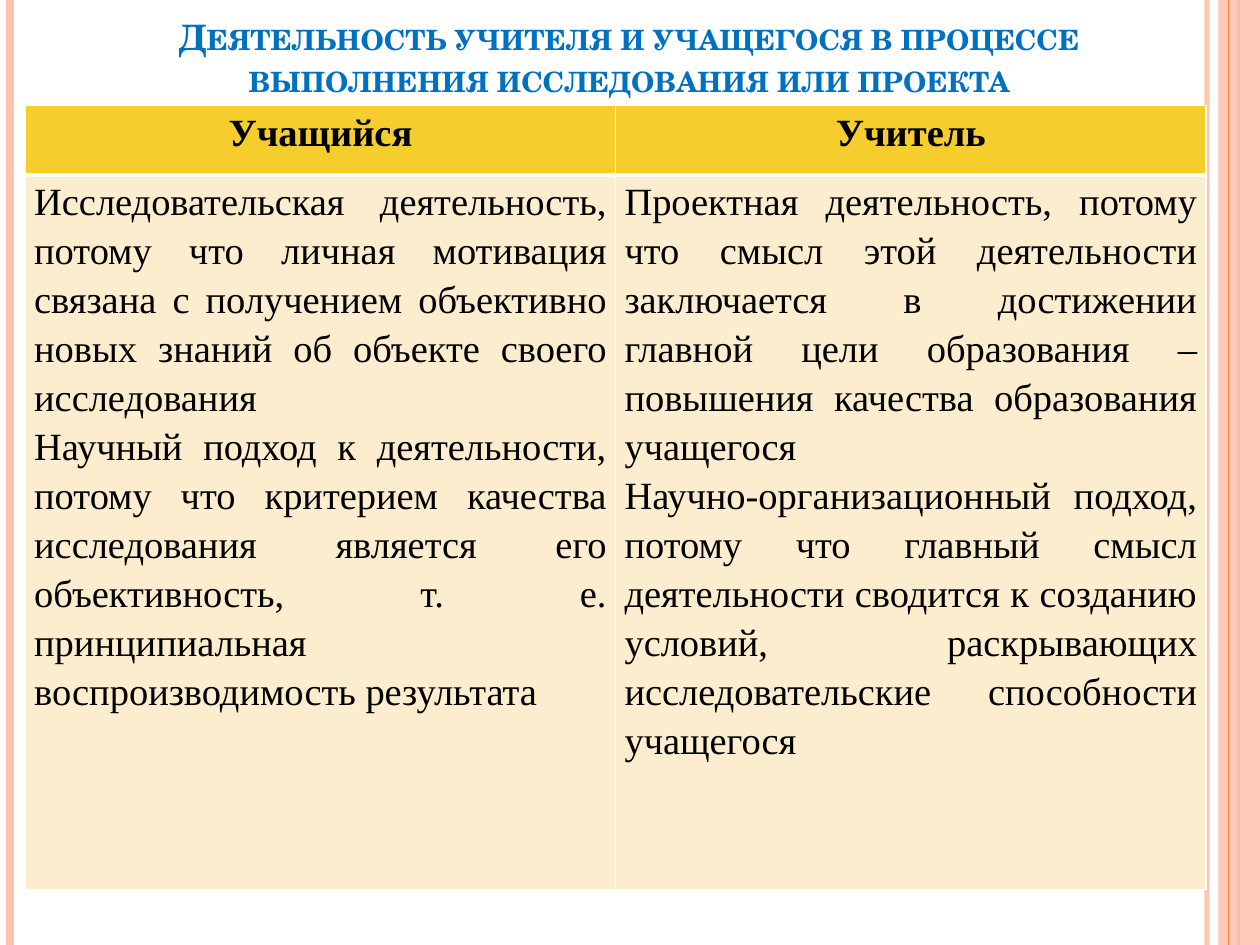
from dataclasses import dataclass

from pptx import Presentation
from pptx.dml.color import RGBColor
from pptx.enum.shapes import MSO_CONNECTOR, MSO_SHAPE
from pptx.enum.text import MSO_ANCHOR, MSO_AUTO_SIZE, PP_ALIGN
from pptx.oxml.ns import qn
from pptx.oxml.xmlchemy import OxmlElement
from pptx.util import Cm, Pt

STRAIGHT = MSO_CONNECTOR.STRAIGHT
RECTANGLE = MSO_SHAPE.RECTANGLE
CENTER, JUSTIFY = PP_ALIGN.CENTER, PP_ALIGN.JUSTIFY
TITLE_ONLY = 5
WIDTH, HEIGHT = 25.4, 19.05
PINK, ORANGE = "FEC3AE", "FE8637"
TITLE_TEXT = ("Деятельность учителя и учащегося в процессе "
              "выполнения исследования или проекта")


@dataclass
class Stripe:
    x: float
    color: str
    weight: float
    opacity: int = 100


@dataclass
class Role:
    name: str
    activities: list[str]


LOWER_STRIPES = [
    Stripe(24.33, PINK, 3, 93),
    Stripe(0.2, PINK, 4.5),
    Stripe(24.97, ORANGE, 1.5),
]
UPPER_STRIPE = Stripe(24.77, ORANGE, 0.75)

ROLES = [
    Role("Учащийся", [
        "Исследовательская деятельность, потому что личная мотивация связана "
        "с получением объективно новых знаний об объекте своего исследования",
        "Научный подход к деятельности, потому что критерием качества "
        "исследования является его объективность, т. е. принципиальная "
        "воспроизводимость результата",
    ]),
    Role("Учитель", [
        "Проектная деятельность, потому что смысл этой деятельности "
        "заключается в достижении главной цели образования – повышения "
        "качества образования учащегося",
        "Научно-организационный подход, потому что главный смысл деятельности "
        "сводится к созданию условий, раскрывающих исследовательские "
        "способности учащегося",
    ]),
]


def rgb(color: str) -> RGBColor:
    return RGBColor.from_string(color)


def set_opacity(shape, percent: int) -> None:
    for color in shape._element.spPr.iter(qn("a:srgbClr")):
        alpha = OxmlElement("a:alpha")
        alpha.set("val", str(percent * 1000))
        color.append(alpha)


def draw_stripe(page, stripe: Stripe) -> None:
    line = page.shapes.add_connector(
        STRAIGHT, Cm(stripe.x), Cm(0), Cm(stripe.x), Cm(HEIGHT))
    line.line.color.rgb = rgb(stripe.color)
    line.line.width = Pt(stripe.weight)
    if stripe.opacity < 100:
        set_opacity(line, stripe.opacity)
    line._element.spPr.append(OxmlElement("a:effectLst"))


def draw_band(page) -> None:
    left = 24.56
    band = page.shapes.add_shape(
        RECTANGLE, Cm(left), Cm(0), Cm(WIDTH - left), Cm(HEIGHT))
    band.shadow.inherit = False
    band.fill.solid()
    band.fill.fore_color.rgb = rgb(PINK)
    band.line.fill.background()
    set_opacity(band, 87)


def add_span(para, text: str, font: str, size: float, color: str, bold: bool):
    span = para.add_run()
    span.text = text
    span.font.name = font
    span.font.size = Pt(size)
    span.font.bold = bold
    span.font.color.rgb = rgb(color)
    return span


def write_title(page) -> None:
    title = page.shapes.title
    title.left, title.top = Cm(1.27), Cm(0)
    title.width, title.height = Cm(22.83), Cm(2.13)
    box = title.text_frame
    box.word_wrap = True
    box.auto_size = MSO_AUTO_SIZE.NONE
    box.vertical_anchor = MSO_ANCHOR.BOTTOM
    para = box.paragraphs[0]
    para.alignment = CENTER
    span = add_span(para, TITLE_TEXT, "TeX Gyre Schola", 20, "0070C0", True)
    span.font._element.set("cap", "small")


def set_borders(cell, bottom: float) -> None:
    """Give the cell white borders, 1 pt wide except at the bottom."""
    properties = cell._tc.get_or_add_tcPr()
    sides = [("a:lnL", 1), ("a:lnR", 1), ("a:lnT", 1), ("a:lnB", bottom)]
    for index, (side, weight) in enumerate(sides):
        border = OxmlElement(side)
        border.set("w", str(Pt(weight)))
        fill = OxmlElement("a:solidFill")
        color = OxmlElement("a:srgbClr")
        color.set("val", "FFFFFF")
        fill.append(color)
        border.append(fill)
        properties.insert(index, border)


def fill_cell(cell, texts: list[str], fill: str, header: bool) -> None:
    cell.margin_left = cell.margin_right = Cm(0.18)
    cell.margin_top = cell.margin_bottom = Cm(0)
    cell.fill.solid()
    cell.fill.fore_color.rgb = rgb(fill)
    set_borders(cell, 3 if header else 1)
    box = cell.text_frame
    for index, text in enumerate(texts):
        para = box.add_paragraph() if index else box.paragraphs[0]
        para.alignment = CENTER if header else JUSTIFY
        para.line_spacing = 1.15
        add_span(para, text, "Times New Roman", 22, "000000", header)


def draw_table(page, roles: list[Role]) -> None:
    row_heights = [1.4, 14.4]
    column_width = 11.9
    table = page.shapes.add_table(
        len(row_heights), len(roles), Cm(0.51), Cm(2.13),
        Cm(column_width * len(roles)), Cm(sum(row_heights))).table
    for row, height in zip(table.rows, row_heights):
        row.height = Cm(height)
    for index, role in enumerate(roles):
        table.columns[index].width = Cm(column_width)
        fill_cell(table.cell(0, index), [role.name], "F5CD2D", True)
        fill_cell(table.cell(1, index), role.activities, "FBEDCD", False)


def main() -> None:
    deck = Presentation()
    deck.slide_width, deck.slide_height = Cm(WIDTH), Cm(HEIGHT)
    page = deck.slides.add_slide(deck.slide_layouts[TITLE_ONLY])
    for stripe in LOWER_STRIPES:
        draw_stripe(page, stripe)
    draw_band(page)
    draw_stripe(page, UPPER_STRIPE)
    write_title(page)
    draw_table(page, ROLES)
    deck.save("out.pptx")


if __name__ == "__main__":
    main()
